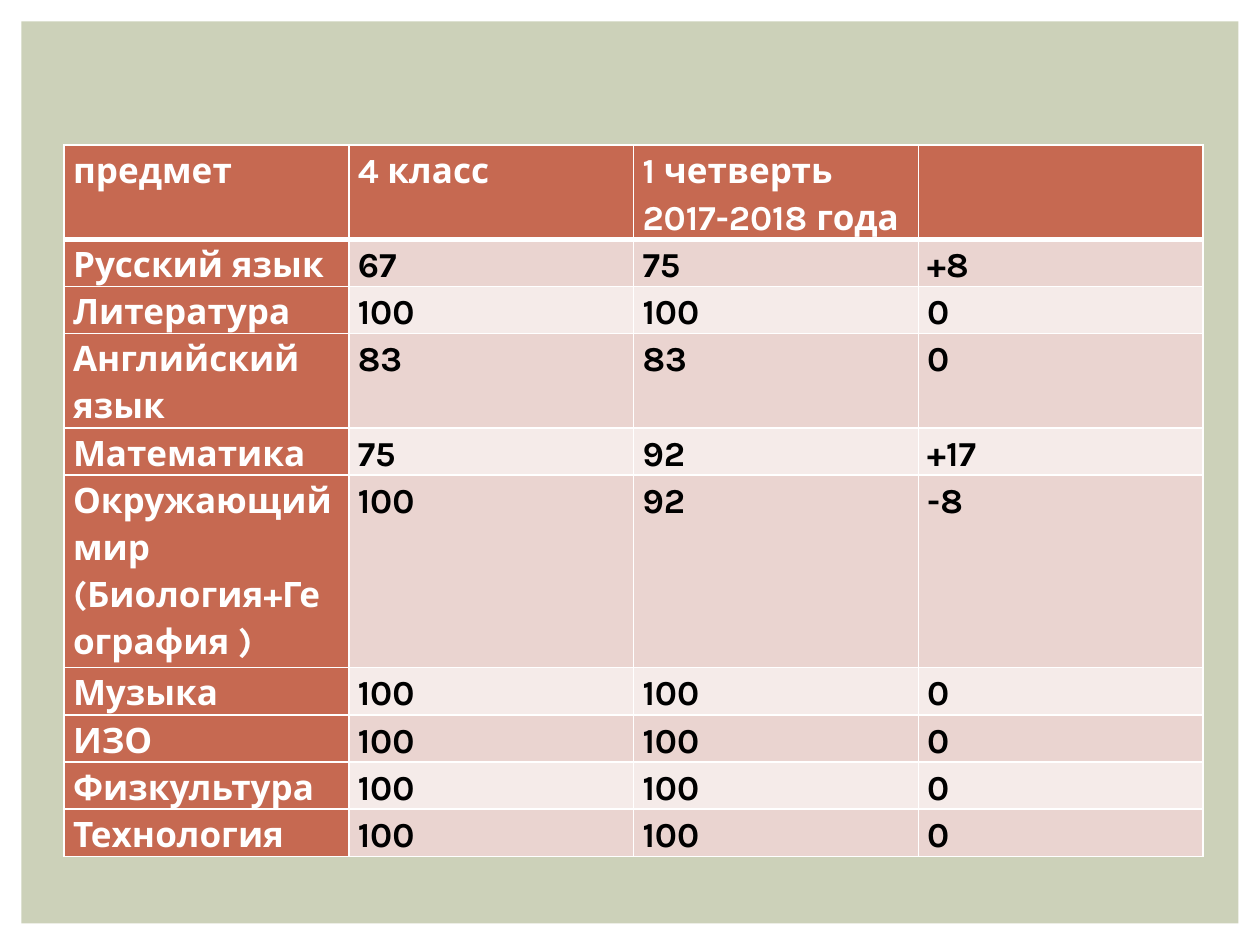
from lxml import etree
from pptx import Presentation, util as u
from pptx.dml.color import RGBColor
from pptx.enum import shapes, text
from pptx.oxml.ns import qn

HEADER = ("предмет", "4 класс", "1 четверть\n2017-2018 года", "")
RESULTS = [
    ("Русский язык", "67", "75", "+8"),
    ("Литература", "100", "100", "0"),
    ("Английский язык", "83", "83", "0"),
    ("Математика", "75", "92", "+17"),
    ("Окружающий мир (Биология+География )", "100", "92", "-8"),
    ("Музыка", "100", "100", "0"),
    ("ИЗО", "100", "100", "0"),
    ("Физкультура", "100", "100", "0"),
    ("Технология", "100", "100", "0"),
]
WHITE, BLACK, SAGE, BRICK = "FFFFFF", "000000", "CCD1B9", "C66951"
BANDS = ("EAD4D0", "F5EBE9")
HEADER_HEIGHT, ROW_HEIGHT, LONG_ROW_HEIGHT = 0.75, 0.36, 1.53
LONG_ROW = 5


def paint(fill, color):
    fill.solid()
    fill.fore_color.rgb = RGBColor.from_string(color)


def write(frame, words, font="Karla", size=20, color=BLACK, bold=True):
    frame.text = words
    for paragraph in frame.paragraphs:
        paragraph.alignment = text.PP_ALIGN.JUSTIFY
        paragraph.line_spacing = 1.15
        for run in paragraph.runs:
            run.font.name, run.font.size = font, u.Pt(size)
            run.font.bold = bold
            run.font.color.rgb = RGBColor.from_string(color)


def border(cell, color=WHITE, **widths):
    properties = cell._tc.get_or_add_tcPr()
    for side in "LRTB":
        line = etree.SubElement(properties, qn(f"a:ln{side}"),
                                w=str(u.Pt(widths.get(side, 1))))
        solid = etree.SubElement(line, qn("a:solidFill"))
        etree.SubElement(solid, qn("a:srgbClr"), val=color)


deck = Presentation()
deck.slide_width, deck.slide_height = u.Inches(10), u.Inches(7.5)
slide = deck.slides.add_slide(deck.slide_layouts[6])
paint(slide.background.fill, WHITE)

margin = u.Inches(0.17)
panel = slide.shapes.add_shape(
    shapes.MSO_SHAPE.RECTANGLE, margin, margin,
    deck.slide_width - 2 * margin, deck.slide_height - 2 * margin)
panel.shadow.inherit = False
paint(panel.fill, SAGE)
panel.line.fill.background()

rows = [HEADER, *RESULTS]
grades = slide.shapes.add_table(
    len(rows), len(HEADER), u.Inches(0.51), u.Inches(1.15),
    u.Inches(9.04), u.Inches(5.37)).table

for r, row in enumerate(rows):
    height = {0: HEADER_HEIGHT, LONG_ROW: LONG_ROW_HEIGHT}.get(r, ROW_HEIGHT)
    grades.rows[r].height = u.Inches(height)
    for c, words in enumerate(row):
        cell = grades.cell(r, c)
        heading = r == 0 or c == 0
        cell.margin_left = cell.margin_right = u.Inches(0.07)
        cell.margin_top = cell.margin_bottom = 0
        border(cell, T=3 if r == 1 else 1, B=3 if r == 0 else 1)
        paint(cell.fill, BRICK if heading else BANDS[(r - 1) % 2])
        write(cell.text_frame, words, color=WHITE if heading else BLACK)

deck.save("out.pptx")
